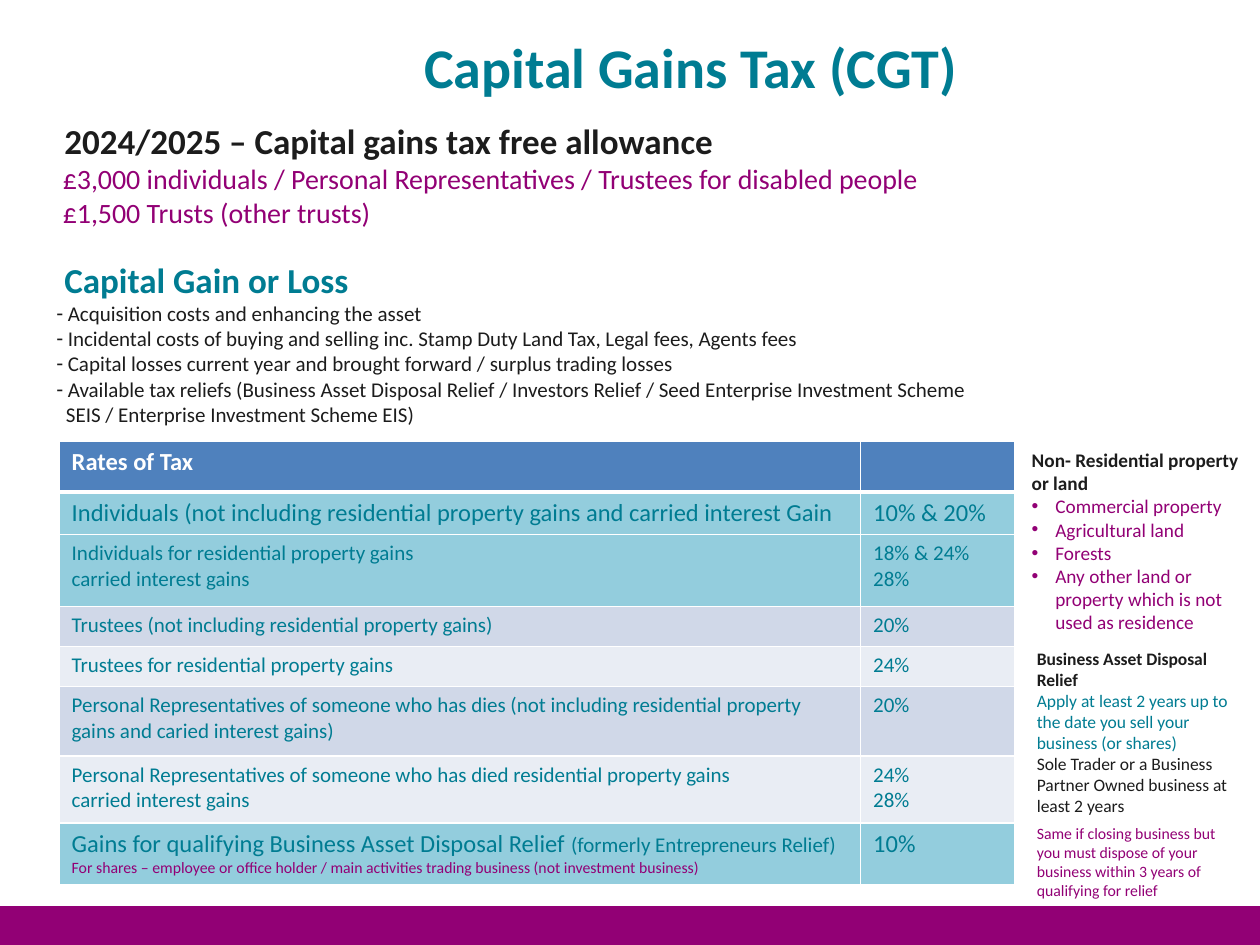
from dataclasses import dataclass

import pptx
import pptx.dml.color
import pptx.enum.shapes
import pptx.oxml.ns
import pptx.util
from lxml import etree

Pt = pptx.util.Pt


@dataclass(frozen=True)
class Theme:
    font: str = "Calibri"
    teal: str = "007C92"
    plum: str = "920075"
    ink: str = "1C1C1C"
    white: str = "FFFFFF"
    blue: str = "4F81BD"
    aqua: str = "93CDDD"
    dark: str = "D0D8E8"
    light: str = "E9EDF4"
    title: int = 32
    head: int = 20
    lead: int = 16
    large: int = 14
    body: int = 12
    side: int = 11
    small: int = 10
    note: int = 9


T = Theme()


@dataclass(frozen=True)
class Rate:
    label: str
    value: str
    height: float
    fill: str
    size: int = T.body
    color: str = T.teal
    bold: bool = False


RATES = [
    Rate("Rates of Tax", "", 28, T.blue, T.large, T.white, True),
    Rate("Individuals (not including residential property gains and "
         "carried interest Gain", "10% & 20%", 23, T.aqua, T.large),
    Rate("Individuals for residential property gains\ncarried interest gains",
         "18% & 24%\n28%", 41, T.aqua),
    Rate("Trustees (not including residential property gains)",
         "20%", 23, T.dark),
    Rate("Trustees for residential property gains", "24%", 23, T.light),
    Rate("Personal Representatives of someone who has dies (not including "
         "residential property gains and caried interest gains)",
         "20%", 39.6, T.dark),
    Rate("Personal Representatives of someone who has died residential "
         "property gains\ncarried interest gains", "24%\n28%", 38.2, T.light),
    Rate("Gains for qualifying Business Asset Disposal Relief ",
         "10%", 34.6, T.aqua, T.large),
]
COSTS = [
    "Acquisition costs and enhancing the asset",
    "Incidental costs of buying and selling inc. Stamp Duty Land Tax, "
    "Legal fees, Agents fees",
    "Capital losses current year and brought forward / surplus trading losses",
    "Available tax reliefs (Business Asset Disposal Relief / Investors Relief "
    "/ Seed Enterprise Investment Scheme",
]
LANDS = [
    "Commercial property",
    "Agricultural land",
    "Forests",
    "Any other land or property which is not used as residence",
]


def rgb(code: str) -> pptx.dml.color.RGBColor:
    return pptx.dml.color.RGBColor.from_string(code)


def write(frame, text: str, *, size: int, color: str, bold: bool = False,
          bullet: str = "", left: float = 0, before: float = 0,
          join: bool = False) -> None:
    """Add one paragraph per line of text, or join the last paragraph."""
    for line in text.split("\n"):
        para = frame.paragraphs[-1]
        if frame.text and not join:
            para = frame.add_paragraph()
        if left:
            props = para._p.get_or_add_pPr()
            props.set("marL", str(Pt(left)))
            props.set("indent", str(Pt(-left) if bullet else 0))
            if bullet:
                for tag, key, value in (("a:buFont", "typeface", "Arial"),
                                        ("a:buChar", "char", bullet)):
                    item = etree.SubElement(props, pptx.oxml.ns.qn(tag))
                    item.set(key, value)
        if before:
            para.space_before = Pt(before)
        run = para.add_run()
        run.text = line
        run.font.name = T.font
        run.font.size = Pt(size)
        run.font.bold = bold
        run.font.color.rgb = rgb(color)


def add_box(slide, left: float, top: float, width: float, height: float):
    box = slide.shapes.add_textbox(Pt(left), Pt(top), Pt(width), Pt(height))
    box.text_frame.word_wrap = True
    return box.text_frame


def edge(cell, tag: str, width: float) -> None:
    props = cell._tc.get_or_add_tcPr()
    line = etree.SubElement(props, pptx.oxml.ns.qn(tag), w=str(Pt(width)))
    fill = etree.SubElement(line, pptx.oxml.ns.qn("a:solidFill"))
    etree.SubElement(fill, pptx.oxml.ns.qn("a:srgbClr"), val=T.white)


def add_rates(slide) -> None:
    widths = (458, 88)
    height = sum(rate.height for rate in RATES)
    table = slide.shapes.add_table(len(RATES), len(widths), Pt(33.8), Pt(252),
                                   Pt(sum(widths)), Pt(height)).table
    for col, width in zip(table.columns, widths):
        col.width = Pt(width)
    for num, rate in enumerate(RATES):
        table.rows[num].height = Pt(rate.height)
        for col, text in enumerate((rate.label, rate.value)):
            cell = table.cell(num, col)
            edge(cell, "a:lnL", 1)
            edge(cell, "a:lnR", 1)
            edge(cell, "a:lnT", 3 if num == 1 else 1)
            edge(cell, "a:lnB", 3 if num == 0 else 1)
            cell.fill.solid()
            cell.fill.fore_color.rgb = rgb(rate.fill)
            if text:
                write(cell.text_frame, text, size=rate.size,
                      color=rate.color, bold=rate.bold)
    last = table.cell(len(RATES) - 1, 0).text_frame
    write(last, "(formerly Entrepreneurs Relief)", size=T.body,
          color=T.teal, join=True)
    write(last, "For shares – employee or office holder / main activities "
          "trading business (not investment business)",
          size=T.note, color=T.plum)


def add_bar(slide) -> None:
    bar = slide.shapes.add_shape(pptx.enum.shapes.MSO_SHAPE.RECTANGLE,
                                 Pt(0), Pt(519), Pt(720), Pt(21))
    bar.shadow.inherit = False
    bar.fill.solid()
    bar.fill.fore_color.rgb = rgb(T.plum)
    bar.line.color.rgb = rgb(T.plum)
    bar.line.width = Pt(2)


def add_main(slide) -> None:
    main = add_box(slide, 25.2, 64.8, 551.5, 206)
    write(main, "2024/2025 – Capital gains tax free allowance",
          size=T.head, color=T.ink, bold=True, left=4.5)
    write(main, "£3,000 individuals / Personal Representatives / Trustees for "
          "disabled people\n£1,500 Trusts (other trusts)",
          size=T.lead, color=T.plum, left=3.6)
    write(main, "Capital Gain or Loss", size=T.head, color=T.teal,
          bold=True, left=4.5, before=17)
    for cost in COSTS:
        write(main, cost, size=T.body, color=T.ink, bullet="-", left=6.5)
    write(main, "SEIS / Enterprise Investment Scheme EIS)",
          size=T.body, color=T.ink, left=5.4)


def add_sides(slide) -> None:
    land = add_box(slide, 582.5, 252.7, 134.6, 135.4)
    write(land, "Non- Residential property or land",
          size=T.side, color=T.ink, bold=True)
    for kind in LANDS:
        write(land, kind, size=T.side, color=T.plum, bullet="•", left=13.5)

    relief = add_box(slide, 585.4, 366.5, 134.6, 116.6)
    write(relief, "Business Asset Disposal Relief",
          size=T.small, color=T.ink, bold=True)
    write(relief, "Apply at least 2 years up to the date you sell your "
          "business (or shares)", size=T.small, color=T.teal)
    write(relief, "Sole Trader or a Business Partner Owned business at "
          "least 2 years", size=T.small, color=T.ink)

    note = add_box(slide, 585.4, 467.3, 121.7, 72.7)
    write(note, "Same if closing business but you must dispose of your "
          "business within 3 years of qualifying for relief",
          size=T.note, color=T.plum)


def main() -> None:
    deck = pptx.Presentation()
    deck.slide_width, deck.slide_height = Pt(720), Pt(540)
    slide = deck.slides.add_slide(deck.slide_layouts[6])
    add_bar(slide)
    add_rates(slide)
    add_main(slide)
    title = add_box(slide, 235.4, 15.1, 385.2, 85)
    write(title, "Capital Gains Tax (CGT)", size=T.title,
          color=T.teal, bold=True)
    add_sides(slide)
    deck.save("out.pptx")


if __name__ == "__main__":
    main()
